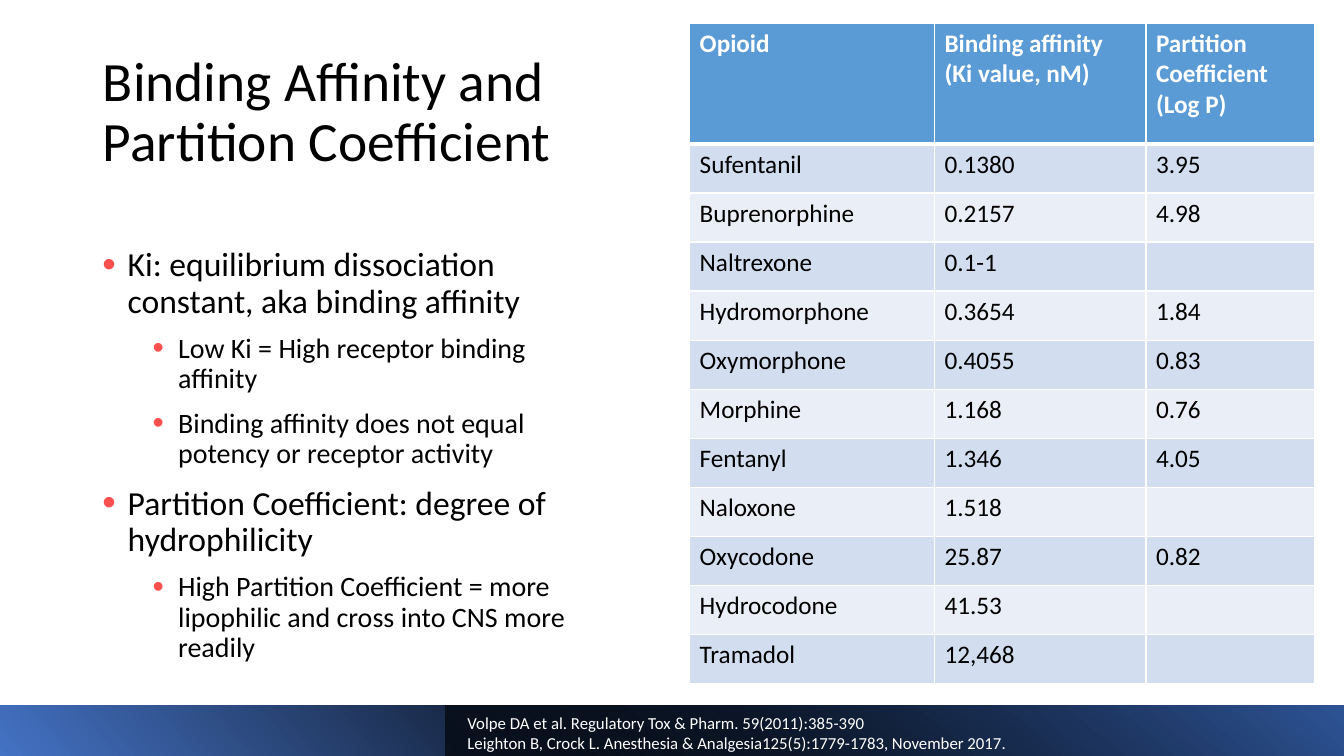
"""Build the slide on opioid binding affinity and partition coefficients."""
from lxml.etree import SubElement
from pptx import Presentation
from pptx.dml.color import RGBColor
from pptx.enum.shapes import MSO_SHAPE as Shape
from pptx.enum.text import MSO_ANCHOR as Anchor, MSO_AUTO_SIZE as AutoSize, PP_ALIGN as Align
from pptx.oxml.ns import qn
from pptx.util import Cm, Pt

BLACK = RGBColor(0x00, 0x00, 0x00)
WHITE = RGBColor(0xFF, 0xFF, 0xFF)
CORAL = RGBColor(0xFF, 0x50, 0x50)
BLUE = RGBColor(0x44, 0x72, 0xC4)
NAVY = RGBColor(0x2F, 0x55, 0x97)
HEADER_BLUE = RGBColor(0x5B, 0x9B, 0xD5)
BAND_DARK = RGBColor(0xD2, 0xDE, 0xEF)
BAND_LIGHT = RGBColor(0xEA, 0xEF, 0xF7)

HEADINGS = ("Opioid", "Binding affinity (Ki value, nM)", "Partition Coefficient (Log P)")
OPIOIDS = (
    ("Sufentanil", "0.1380", "3.95"),
    ("Buprenorphine", "0.2157", "4.98"),
    ("Naltrexone", "0.1-1", ""),
    ("Hydromorphone", "0.3654", "1.84"),
    ("Oxymorphone", "0.4055", "0.83"),
    ("Morphine", "1.168", "0.76"),
    ("Fentanyl", "1.346", "4.05"),
    ("Naloxone", "1.518", ""),
    ("Oxycodone", "25.87", "0.82"),
    ("Hydrocodone", "41.53", ""),
    ("Tramadol", "12,468", ""),
)
POINTS = (
    (0, "Ki: equilibrium dissociation constant, aka binding affinity"),
    (1, "Low Ki = High receptor binding affinity"),
    (1, "Binding affinity does not equal potency or receptor activity"),
    (0, "Partition Coefficient: degree of hydrophilicity"),
    (1, "High Partition Coefficient = more lipophilic and cross into CNS more readily"),
)
SOURCES = (
    "Volpe DA et al. Regulatory Tox & Pharm. 59(2011):385-390",
    "Leighton B, Crock L. Anesthesia & Analgesia125(5):1779-1783, November 2017.",
)


def add_span(para, text, size, color, bold=False):
    span = para.add_run()
    span.text = text
    span.font.name = "Calibri"
    span.font.size = Pt(size)
    span.font.color.rgb = color
    span.font.bold = bold


def add_bar(page, left, width, rotation, angle, stops):
    bar = page.shapes.add_shape(Shape.RECTANGLE, left, Cm(17.78), width, Cm(1.27))
    bar.shadow.inherit = False
    bar.line.fill.background()
    bar.rotation = rotation
    bar.element.spPr.find(qn("a:xfrm")).set("flipH", "1")
    bar.fill.gradient()
    bar.fill.gradient_angle = 360 - angle
    for stop, (position, color) in zip(bar.fill.gradient_stops, stops):
        stop.position = position
        stop.color.rgb = color
    return bar


deck = Presentation()
deck.slide_width = Cm(33.87)
deck.slide_height = Cm(19.05)
page = deck.slides.add_slide(deck.slide_layouts[5])

add_bar(page, 0, deck.slide_width, 180, 40, ((0, BLUE), (0.56, BLACK)))
overlay_left = Cm(11.22)
overlay = add_bar(page, overlay_left, deck.slide_width - overlay_left, 0, 230,
                  ((0, BLACK), (1, NAVY)))
first_color = next(overlay.element.spPr.iter(qn("a:srgbClr")))
SubElement(first_color, qn("a:alpha"), val="63000")

title = page.shapes.title
title.left, title.top, title.width, title.height = Cm(2.34), Cm(1.02), Cm(12.85), Cm(3.68)
frame = title.text_frame
frame.word_wrap = True
frame.auto_size = AutoSize.NONE
frame.vertical_anchor = Anchor.MIDDLE
para = frame.paragraphs[0]
para.alignment = Align.LEFT
para.line_spacing = 0.9
add_span(para, "Binding Affinity and Partition Coefficient", 39.6, BLACK)

frame = page.shapes.add_textbox(Cm(2.18), Cm(6.12), Cm(13.34), Cm(7.98)).text_frame
frame.word_wrap = True
for index, (level, text) in enumerate(POINTS):
    para = frame.add_paragraph() if index else frame.paragraphs[0]
    para.level = level
    para.line_spacing = 0.9
    add_span(para, text, 20 if level else 24, BLACK)
    layout = para._p.get_or_add_pPr()
    layout.set("marL", str(Cm(0.79 + 1.27 * level)))
    layout.set("indent", str(-Cm(0.64)))
    SubElement(SubElement(layout, qn("a:spcBef")), qn("a:spcPct"), val="50000")
    SubElement(SubElement(layout, qn("a:buClr")), qn("a:srgbClr"), val=str(CORAL))
    SubElement(layout, qn("a:buSzPct"), val="115000")
    SubElement(layout, qn("a:buFont"), typeface="Arial")
    SubElement(layout, qn("a:buChar"), char="•")

frame = page.shapes.add_textbox(Cm(11.53), Cm(17.83), Cm(17.07), Cm(1.27)).text_frame
frame.word_wrap = True
frame.auto_size = AutoSize.SHAPE_TO_FIT_TEXT
for index, source in enumerate(SOURCES):
    para = frame.add_paragraph() if index else frame.paragraphs[0]
    add_span(para, source, 12, WHITE)

rows = (HEADINGS,) + OPIOIDS
table = page.shapes.add_table(len(rows), len(HEADINGS), Cm(17.38), Cm(0.58),
                              Cm(15.75), Cm(16.64)).table
for column, width in zip(table.columns, (6.17, 5.33, 4.25)):
    column.width = Cm(width)
for number, values in enumerate(rows):
    is_header = number == 0
    table.rows[number].height = Cm(3.05) if is_header else Cm(13.59) // len(OPIOIDS)
    band = HEADER_BLUE if is_header else BAND_DARK if number % 2 else BAND_LIGHT
    for cell, text in zip(table.rows[number].cells, values):
        for side in ("lnL", "lnR", "lnT", "lnB"):
            thick = (is_header and side == "lnB") or (number == 1 and side == "lnT")
            border = SubElement(cell._tc.get_or_add_tcPr(), qn(f"a:{side}"),
                                w=str(Pt(3 if thick else 1)))
            SubElement(SubElement(border, qn("a:solidFill")), qn("a:srgbClr"), val=str(WHITE))
        cell.fill.solid()
        cell.fill.fore_color.rgb = band
        if text:
            add_span(cell.text_frame.paragraphs[0], text, 18,
                     WHITE if is_header else BLACK, is_header)

deck.save("out.pptx")
